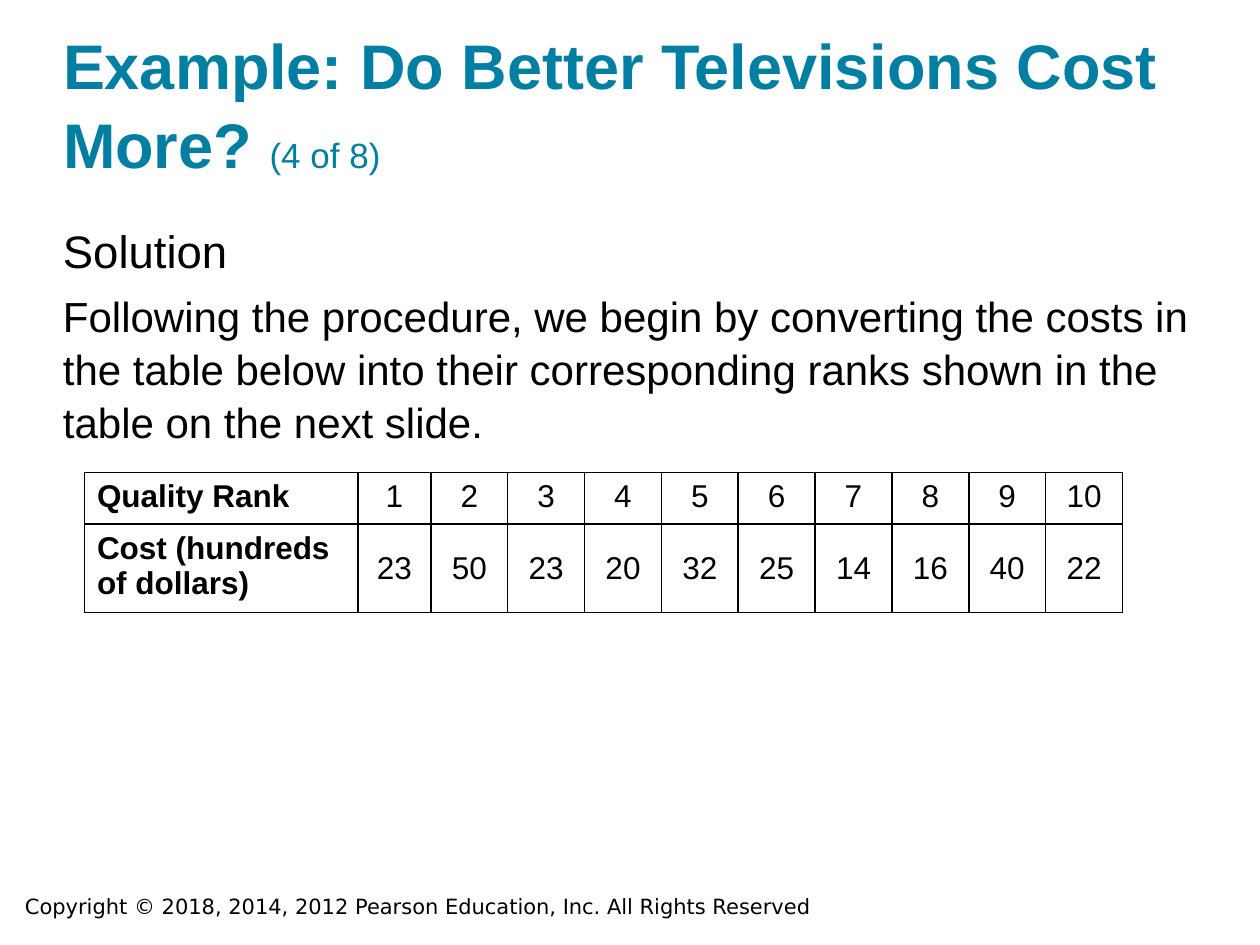
from lxml.etree import SubElement
from pptx import Presentation
from pptx.dml.color import RGBColor
from pptx.enum.text import MSO_ANCHOR, PP_ALIGN
from pptx.oxml.ns import qn
from pptx.util import Inches, Pt

RANKS = [str(n) for n in range(1, 11)]
COSTS = ["23", "50", "23", "20", "32", "25", "14", "16", "40", "22"]
ROWS = [["Quality Rank"] + RANKS, ["Cost (hundreds of dollars)"] + COSTS]


def rgb(value):
    """Turn a hex string into a colour."""
    return RGBColor.from_string(value)


def add_run(p, text, size=18, font="Arial", color="000000", bold=False):
    """Add formatted text to a paragraph."""
    r = p.add_run()
    r.text = text
    r.font.size = Pt(size)
    r.font.name = font
    r.font.bold = bold
    r.font.color.rgb = rgb(color)


def place(sp, left, top, width, height):
    """Set the position and size of a shape."""
    sp.left, sp.top = Inches(left), Inches(top)
    sp.width, sp.height = Inches(width), Inches(height)


def clear_insets(tf):
    """Wrap the text and remove the inner margins."""
    tf.word_wrap = True
    tf.margin_left = tf.margin_right = tf.margin_top = tf.margin_bottom = 0


def add_title(s):
    """Fill the title placeholder."""
    place(s.shapes.title, 0.5, 0.24, 9, 1.2)
    tf = s.shapes.title.text_frame
    clear_insets(tf)
    tf.vertical_anchor = MSO_ANCHOR.BOTTOM
    p = tf.paragraphs[0]
    p.alignment = PP_ALIGN.LEFT
    p.line_spacing = 1.05
    add_run(p, "Example: Do Better Televisions Cost More? ", size=36, color="007FA3", bold=True)
    add_run(p, "(4 of 8)", size=20, color="007FA3")


def add_body(s):
    """Add the solution text."""
    sp = s.shapes.add_textbox(Inches(0.5), Inches(1.75), Inches(9), Inches(1.83))
    tf = sp.text_frame
    clear_insets(tf)
    p = tf.paragraphs[0]
    p.line_spacing = 1.05
    add_run(p, "Solution", size=26)
    p = tf.add_paragraph()
    p.line_spacing = 1.05
    p.space_before = Pt(6)
    add_run(p, "Following the procedure, we begin by converting the costs in the table below "
               "into their corresponding ranks shown in the table on the next slide.", size=24)


def set_borders(cell, color="000000", width=1):
    """Draw a line on each side of a cell."""
    tc_pr = cell._tc.get_or_add_tcPr()
    for i, side in enumerate(("a:lnL", "a:lnR", "a:lnT", "a:lnB")):
        ln = tc_pr.makeelement(qn(side), {"w": str(Pt(width))})
        SubElement(SubElement(ln, qn("a:solidFill")), qn("a:srgbClr"), val=color)
        tc_pr.insert(i, ln)


def add_rank_table(s):
    """Add the table of quality ranks and costs."""
    widths = [2.17, 0.58] + [0.61] * 9
    heights = [0.41, 0.67]
    table = s.shapes.add_table(len(ROWS), len(widths), Inches(0.67), Inches(3.75),
                               Inches(sum(widths)), Inches(sum(heights))).table
    for column, width in zip(table.columns, widths):
        column.width = Inches(width)
    for i, (row, height) in enumerate(zip(ROWS, heights)):
        table.rows[i].height = Inches(height)
        for j, text in enumerate(row):
            cell = table.cell(i, j)
            cell.fill.solid()
            cell.fill.fore_color.rgb = rgb("FFFFFF")
            set_borders(cell)
            p = cell.text_frame.paragraphs[0]
            add_run(p, text, bold=j == 0)
            if j > 0:
                p.alignment = PP_ALIGN.CENTER
                cell.vertical_anchor = MSO_ANCHOR.MIDDLE if i else MSO_ANCHOR.TOP


def add_copyright(s):
    """Add the copyright line."""
    sp = s.shapes.add_textbox(Inches(0.1), Inches(7.04), Inches(7.83), Inches(0.3))
    sp.text_frame.word_wrap = True
    add_run(sp.text_frame.paragraphs[0],
            "Copyright © 2018, 2014, 2012 Pearson Education, Inc. All Rights Reserved",
            size=12, font="DejaVu Sans")


def main():
    """Build the slide and save it."""
    prs = Presentation()
    prs.slide_width, prs.slide_height = Inches(10), Inches(7.5)
    s = prs.slides.add_slide(prs.slide_layouts[5])
    add_copyright(s)
    add_title(s)
    add_body(s)
    add_rank_table(s)
    prs.save("out.pptx")


if __name__ == "__main__":
    main()
